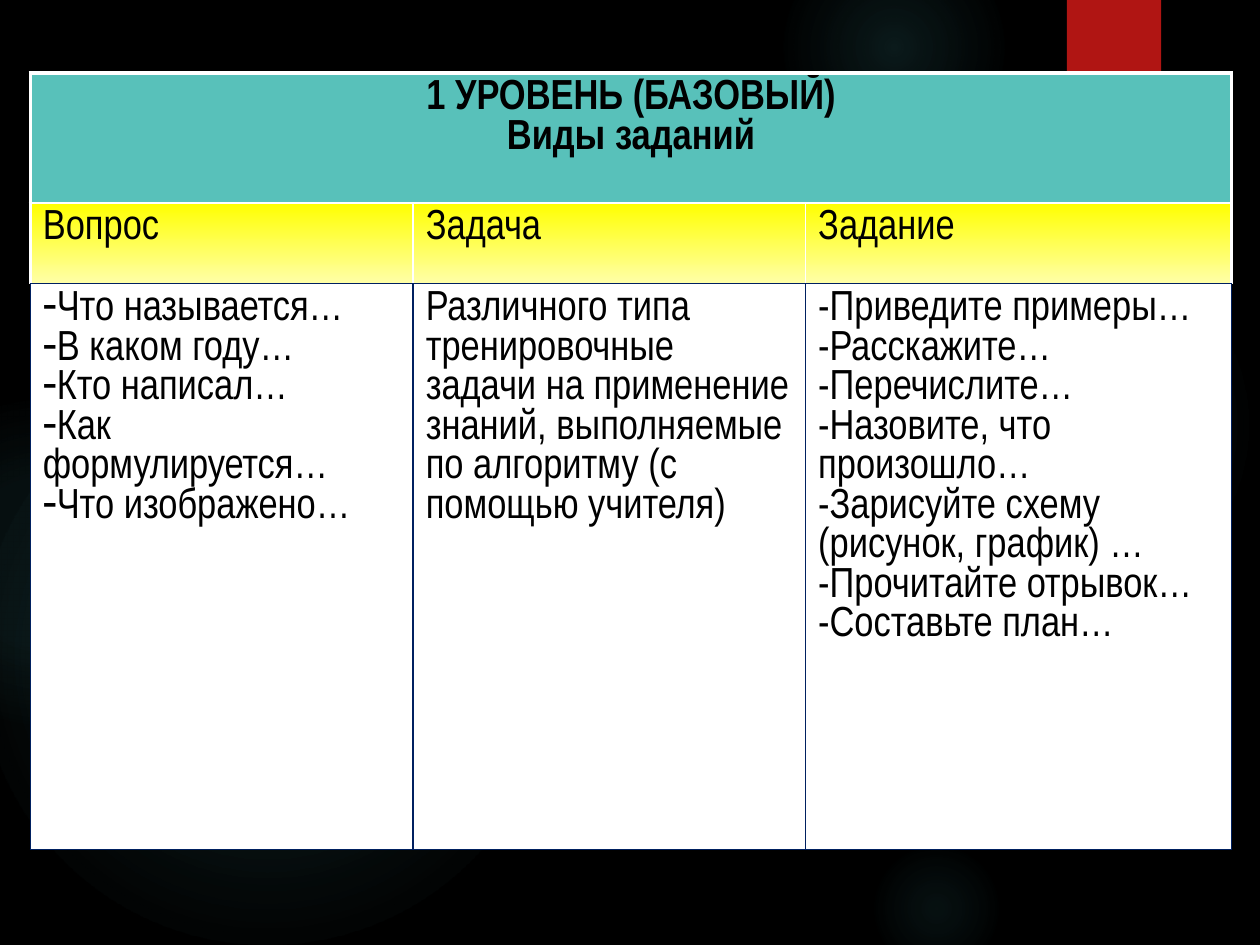
from dataclasses import dataclass

import pptx
import pptx.dml.color
import pptx.enum.shapes
import pptx.enum.text
import pptx.oxml
import pptx.oxml.ns
import pptx.util

Cm = pptx.util.Cm
Pt = pptx.util.Pt
RGBColor = pptx.dml.color.RGBColor
Shapes = pptx.enum.shapes.MSO_SHAPE
qn = pptx.oxml.ns.qn
NAMESPACE = pptx.oxml.ns.nsdecls("a")

BLACK = RGBColor(0x00, 0x00, 0x00)
WHITE = RGBColor(0xFF, 0xFF, 0xFF)
GLOW = RGBColor(0x50, 0xB9, 0xC1)
RED = RGBColor(0xB0, 0x15, 0x13)
TEAL = RGBColor(0x58, 0xC1, 0xBA)
YELLOW = RGBColor(0xFF, 0xFF, 0x00)
PALE_YELLOW = RGBColor(0xFF, 0xFF, 0xA8)
NAVY = RGBColor(0x00, 0x20, 0x60)
FONT = "Arial Narrow"
FONT_SIZE = Pt(24)


@dataclass
class Glow:
    left: float
    top: float
    size: float
    centre_alpha: int
    middle_alpha: int
    fade_end: int


@dataclass
class Border:
    color: RGBColor
    width: float


@dataclass
class Column:
    width: float
    heading: str
    lines: list[str]
    bullet: str = ""


GLOWS = [
    Glow(17.5, 4.65, 7.82, 7, 6, 69),
    Glow(15.8, -1.27, 4.45, 14, 7, 73),
    Glow(17.5, 16.94, 2.74, 9, 5, 66),
    Glow(-0.43, 7.42, 11.63, 11, 10, 75),
    Glow(-2.34, 8.05, 6.55, 8, 8, 72),
]
TITLE_LINES = ["1 УРОВЕНЬ (БАЗОВЫЙ)", "Виды заданий"]
COLUMNS = [
    Column(7.72, "Вопрос",
           ["Что называется…", "В каком году…", "Кто написал…",
            "Как формулируется…", "Что изображено…"], bullet="-"),
    Column(7.91, "Задача",
           ["Различного типа тренировочные задачи на применение знаний, "
            "выполняемые по алгоритму (с помощью учителя)"]),
    Column(8.59, "Задание",
           ["-Приведите примеры…", "-Расскажите…", "-Перечислите…",
            "-Назовите, что произошло…", "-Зарисуйте схему (рисунок, график) …",
            "-Прочитайте отрывок…", "-Составьте план…"]),
]
ROW_HEIGHTS = [2.62, 1.63, 11.4]
THICK = Border(WHITE, 2.25)
THIN = Border(WHITE, 1)
DARK = Border(NAVY, 1)


def add_glow(page, glow: Glow) -> None:
    """Draw a circle that fades from its centre to nothing."""
    size = Cm(glow.size)
    circle = page.shapes.add_shape(Shapes.OVAL, Cm(glow.left), Cm(glow.top), size, size)
    circle.shadow.inherit = False
    circle.line.fill.background()
    circle.fill.gradient()
    fades = [(0, glow.centre_alpha), (36, glow.middle_alpha), (glow.fade_end, 0)]
    stops = "".join(
        f'<a:gs pos="{place * 1000}"><a:srgbClr val="{GLOW}">'
        f'<a:alpha val="{alpha * 1000}"/></a:srgbClr></a:gs>'
        for place, alpha in fades)
    gradient = pptx.oxml.parse_xml(
        f'<a:gradFill {NAMESPACE}><a:gsLst>{stops}</a:gsLst><a:path path="circle">'
        '<a:fillToRect l="50000" t="50000" r="50000" b="50000"/></a:path></a:gradFill>')
    properties = circle._element.spPr
    properties.replace(properties.find(qn("a:gradFill")), gradient)


def set_borders(cell, left: Border, right: Border, top: Border, bottom: Border) -> None:
    properties = cell._tc.get_or_add_tcPr()
    sides = {"lnL": left, "lnR": right, "lnT": top, "lnB": bottom}
    for index, (tag, border) in enumerate(sides.items()):
        properties.insert(index, pptx.oxml.parse_xml(
            f'<a:{tag} {NAMESPACE} w="{Pt(border.width)}"><a:solidFill>'
            f'<a:srgbClr val="{border.color}"/></a:solidFill></a:{tag}>'))


def write_lines(cell, lines: list[str], bold: bool = False,
                centred: bool = False, bullet: str = "") -> None:
    box = cell.text_frame
    for index, line in enumerate(lines):
        para = box.add_paragraph() if index else box.paragraphs[0]
        if centred:
            para.alignment = pptx.enum.text.PP_ALIGN.CENTER
        if bullet:
            properties = para._p.get_or_add_pPr()
            properties.append(pptx.oxml.parse_xml(f"<a:buFontTx {NAMESPACE}/>"))
            properties.append(pptx.oxml.parse_xml(f'<a:buChar {NAMESPACE} char="{bullet}"/>'))
        span = para.add_run()
        span.text = line
        span.font.name = FONT
        span.font.size = FONT_SIZE
        span.font.bold = bold
        span.font.color.rgb = BLACK


def fill_solid(cell, color: RGBColor) -> None:
    cell.fill.solid()
    cell.fill.fore_color.rgb = color


def fill_heading(cell) -> None:
    cell.fill.gradient()
    cell.fill.gradient_angle = 270
    for stop, color in zip(cell.fill.gradient_stops, (YELLOW, PALE_YELLOW)):
        stop.color.rgb = color


def add_task_table(page) -> None:
    width = sum(column.width for column in COLUMNS)
    table = page.shapes.add_table(
        len(ROW_HEIGHTS), len(COLUMNS), Cm(0.61), Cm(1.47),
        Cm(width), Cm(sum(ROW_HEIGHTS))).table
    table.first_row = False
    table.horz_banding = False
    for row, height in zip(table.rows, ROW_HEIGHTS):
        row.height = Cm(height)

    # Level title across all columns
    title = table.cell(0, 0)
    title.merge(table.cell(0, len(COLUMNS) - 1))
    write_lines(title, TITLE_LINES, bold=True, centred=True)

    # Headings and tasks
    for index, column in enumerate(COLUMNS):
        table.columns[index].width = Cm(column.width)
        top, heading, tasks = (table.cell(row, index) for row in range(3))
        fill_solid(top, TEAL)
        set_borders(top, THICK, THICK, THICK, THIN)
        left = THICK if index == 0 else THIN
        right = THICK if index == len(COLUMNS) - 1 else THIN
        fill_heading(heading)
        set_borders(heading, left, right, THIN, DARK)
        write_lines(heading, [column.heading])
        fill_solid(tasks, WHITE)
        set_borders(tasks, DARK, DARK, DARK, DARK)
        write_lines(tasks, column.lines, bullet=column.bullet)


def main() -> None:
    deck = pptx.Presentation()
    deck.slide_width, deck.slide_height = Cm(25.4), Cm(19.05)
    page = deck.slides.add_slide(deck.slide_layouts[6])

    # Dark background with soft glows and a red tab
    page.background.fill.solid()
    page.background.fill.fore_color.rgb = BLACK
    for glow in GLOWS:
        add_glow(page, glow)
    tab = page.shapes.add_shape(Shapes.RECTANGLE, Cm(21.51), Cm(0), Cm(1.9), Cm(3.05))
    tab.shadow.inherit = False
    tab.fill.solid()
    tab.fill.fore_color.rgb = RED
    tab.line.fill.background()

    add_task_table(page)
    deck.save("out.pptx")


if __name__ == "__main__":
    main()
